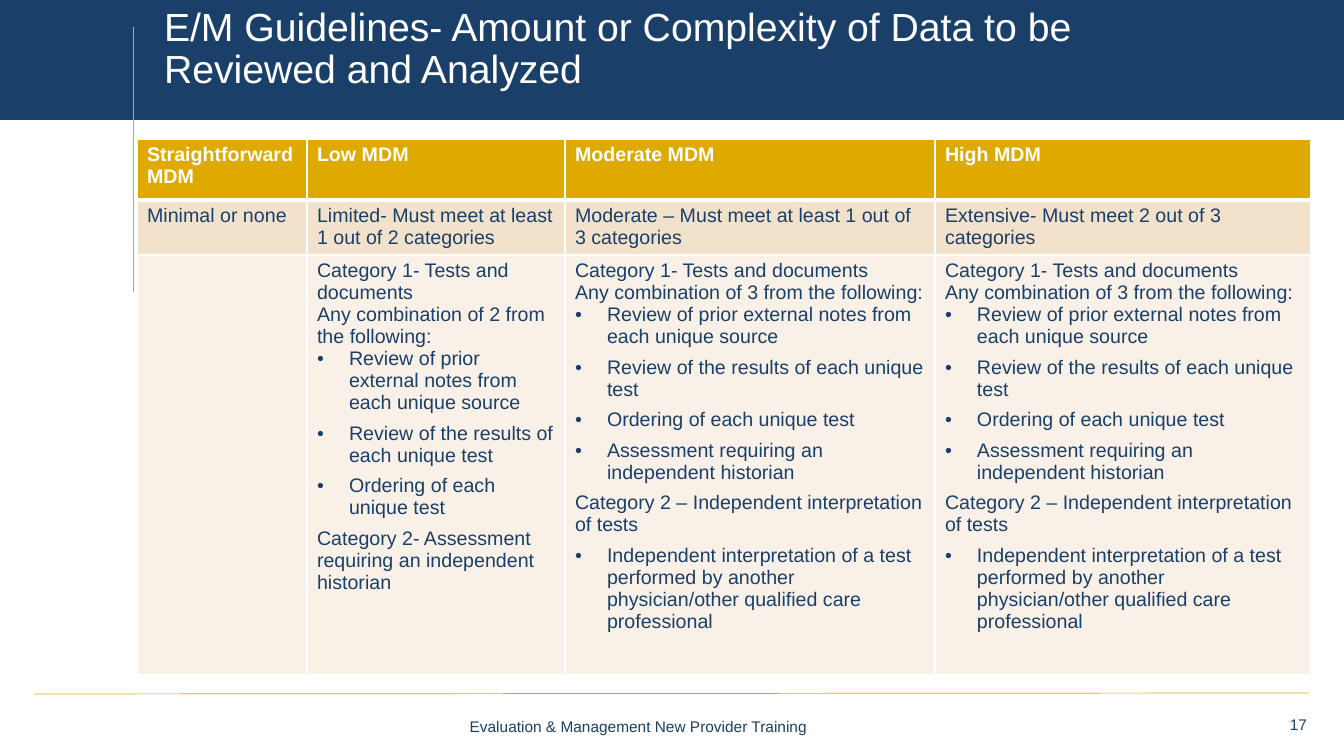
from lxml import etree
from pptx import Presentation
from pptx.dml.color import RGBColor
from pptx.enum.shapes import MSO_CONNECTOR, MSO_SHAPE
from pptx.enum.text import MSO_ANCHOR, MSO_AUTO_SIZE, PP_ALIGN
from pptx.oxml.ns import qn
from pptx.util import Pt

LINE = MSO_CONNECTOR.STRAIGHT
RECT = MSO_SHAPE.RECTANGLE
BOTTOM = MSO_ANCHOR.BOTTOM
NO_FIT = MSO_AUTO_SIZE.NONE
LEFT, CENTER, RIGHT = PP_ALIGN.LEFT, PP_ALIGN.CENTER, PP_ALIGN.RIGHT

COLORS = {"navy": "1A3F68", "gold": "DEAA00", "grey": "A6A6A6", "white": "FFFFFF",
          "sand": "F2E2CC", "cream": "F9F1E7"}

TITLE = "E/M Guidelines- Amount or Complexity of Data to be Reviewed and Analyzed"
FOOTER = "Evaluation & Management New Provider Training"
PAGE = "17"

HEADERS = ["Straightforward MDM", "Low MDM", "Moderate MDM", "High MDM"]
LEVELS = ["Minimal or none",
          "Limited- Must meet at least 1 out of 2 categories",
          "Moderate – Must meet at least 1 out of 3 categories",
          "Extensive- Must meet 2 out of 3 categories"]
CATEGORY_1 = ("plain", "Category 1- Tests and documents")
SHARED_TESTS = [("bullet", "Review of prior external notes from each unique source"),
                ("bullet", "Review of the results of each unique test"),
                ("bullet", "Ordering of each unique test")]
LOW = [CATEGORY_1,
       ("plain", "Any combination of 2 from the following:"),
       *SHARED_TESTS,
       ("spaced", "Category 2- Assessment requiring an independent historian")]
MODERATE = [CATEGORY_1,
            ("plain", "Any combination of 3 from the following:"),
            *SHARED_TESTS,
            ("bullet", "Assessment requiring an independent historian"),
            ("spaced", "Category 2 – Independent interpretation of tests"),
            ("bullet", "Independent interpretation of a test performed by another "
                       "physician/other qualified care professional")]
ROWS = [[[("plain", text)] for text in HEADERS],
        [[("plain", text)] for text in LEVELS],
        [[], LOW, MODERATE, MODERATE]]
ROW_STYLES = [("gold", "white", True), ("sand", "navy", False), ("cream", "navy", False)]

TABLE_LEFT, TABLE_TOP = 137, 139
COL_WIDTHS = [170, 258, 370, 376]
ROW_HEIGHTS = [61, 55, 420]
INDENT = 32
BORDER, HEADER_BORDER = 1, 3


def px(n):
    return round(n * 914400 / 100.8)


def rgb(name):
    return RGBColor.from_string(COLORS[name])


def add_run(p, text, size, color, bold=False):
    r = p.add_run()
    r.text = text
    for name, value in {"name": "Arial", "size": Pt(size), "bold": bold}.items():
        setattr(r.font, name, value)
    r.font.color.rgb = rgb(color)


def fill_text(sp, text, size, color, align, right_inset=10):
    tf = sp.text_frame
    for name, value in {"word_wrap": True, "auto_size": NO_FIT, "vertical_anchor": BOTTOM,
                        "margin_left": px(10), "margin_right": px(right_inset),
                        "margin_top": px(5), "margin_bottom": px(5)}.items():
        setattr(tf, name, value)
    p = tf.paragraphs[0]
    p.alignment = align
    p.line_spacing = 0.9
    add_run(p, text, size, color)


def add_line(shapes, x1, y1, x2, y2, color):
    line = shapes.add_connector(LINE, px(x1), px(y1), px(x2), px(y2))
    line.line.color.rgb = rgb(color)
    line.line.width = Pt(0.5)
    etree.SubElement(line._element.spPr, qn("a:effectLst"))


def add_borders(cell, widths):
    tcPr = cell._tc.get_or_add_tcPr()
    for i, (side, width) in enumerate(widths.items()):
        ln = etree.Element(qn("a:ln" + side), w=str(Pt(width)))
        solid = etree.SubElement(ln, qn("a:solidFill"))
        etree.SubElement(solid, qn("a:srgbClr"), val=COLORS["white"])
        tcPr.insert(i, ln)


def fill_cell(cell, paragraphs, color, bold):
    tf = cell.text_frame
    for i, (kind, text) in enumerate(paragraphs):
        p = tf.add_paragraph() if i else tf.paragraphs[0]
        if kind == "bullet":
            pPr = p._p.get_or_add_pPr()
            pPr.set("marL", str(px(INDENT)))
            pPr.set("indent", str(-px(INDENT)))
            etree.SubElement(pPr, qn("a:buFont"), typeface="Arial")
            etree.SubElement(pPr, qn("a:buChar"), char="•")
        if kind != "plain":
            p.space_after = Pt(6)
        add_run(p, text, 14, color, bold)


def add_guideline_table(shapes):
    table = shapes.add_table(len(ROWS), len(COL_WIDTHS), px(TABLE_LEFT), px(TABLE_TOP),
                             px(sum(COL_WIDTHS)), px(sum(ROW_HEIGHTS))).table
    for column, width in zip(table.columns, COL_WIDTHS):
        column.width = px(width)
    for i, (row, (fill, color, bold)) in enumerate(zip(ROWS, ROW_STYLES)):
        table.rows[i].height = px(ROW_HEIGHTS[i])
        for j, paragraphs in enumerate(row):
            cell = table.cell(i, j)
            cell.fill.solid()
            cell.fill.fore_color.rgb = rgb(fill)
            fill_cell(cell, paragraphs, color, bold)
            add_borders(cell, {"L": BORDER, "R": BORDER,
                               "T": HEADER_BORDER if i == 1 else BORDER,
                               "B": HEADER_BORDER if i == 0 else BORDER})


def main():
    prs = Presentation()
    prs.slide_width, prs.slide_height = px(1344), px(756)
    slide = prs.slides.add_slide(prs.slide_layouts[5])
    shapes = slide.shapes

    page = shapes.add_textbox(px(966), px(704), px(356), px(35))
    fill_text(page, PAGE, 11, "navy", RIGHT, 15)
    footer = shapes.add_textbox(px(371), px(708), px(601), px(33))
    fill_text(footer, FOOTER, 11, "navy", CENTER, 76)
    add_line(shapes, 1309, 693, 34, 694, "gold")

    band = shapes.add_shape(RECT, 0, 0, px(1344), px(120))
    band.shadow.inherit = False
    band.fill.solid()
    band.fill.fore_color.rgb = rgb("navy")
    band.line.fill.background()
    add_line(shapes, 133, 292, 133, 27, "grey")

    title = shapes.title
    title.left, title.top, title.width, title.height = px(154), px(47), px(1008), px(50)
    fill_text(title, TITLE, 28, "white", LEFT)
    shapes._spTree.append(title._element)

    add_guideline_table(shapes)
    prs.save("out.pptx")


if __name__ == "__main__":
    main()
